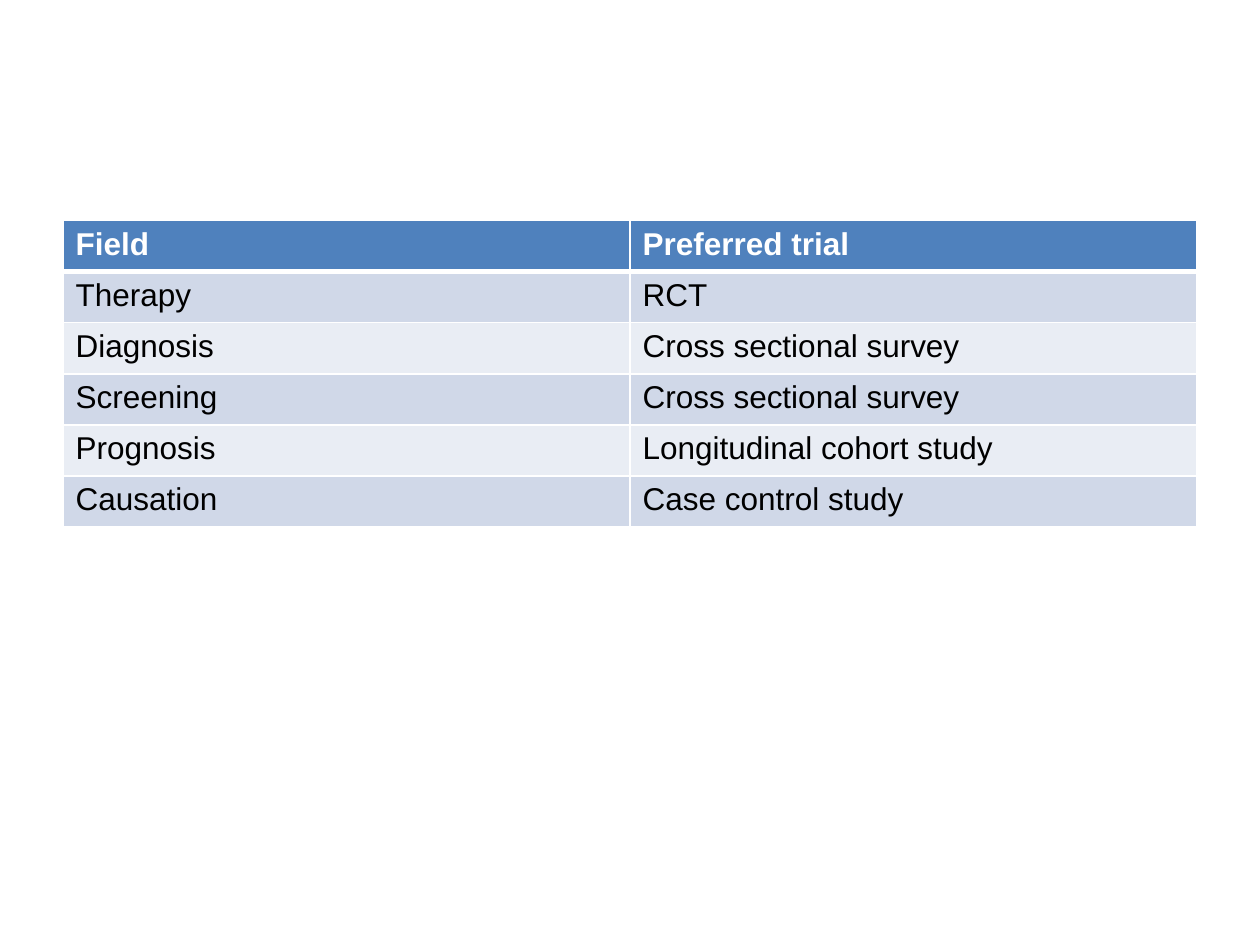
from lxml.etree import SubElement
from pptx import Presentation
from pptx.dml.color import RGBColor
from pptx.oxml.ns import qn
from pptx.util import Pt

WHITE = RGBColor(0xFF, 0xFF, 0xFF)
BLACK = RGBColor(0x00, 0x00, 0x00)
HEADER_BLUE = RGBColor(0x4F, 0x81, 0xBD)
BAND_DARK = RGBColor(0xD0, 0xD8, 0xE8)
BAND_LIGHT = RGBColor(0xE9, 0xED, 0xF4)

TRIALS = [
    ("Field", "Preferred trial"),
    ("Therapy", "RCT"),
    ("Diagnosis", "Cross sectional survey"),
    ("Screening", "Cross sectional survey"),
    ("Prognosis", "Longitudinal cohort study"),
    ("Causation", "Case control study"),
]


def write_text(frame, text, *, size=18, font="Arial", color=BLACK, bold=False):
    """Write one formatted span into the first paragraph of a text frame."""
    span = frame.paragraphs[0].add_run()
    span.text = text
    span.font.size = Pt(size)
    span.font.name = font
    span.font.color.rgb = color
    span.font.bold = bold


def set_borders(cell, *, left=1, right=1, top=1, bottom=1, color=WHITE):
    """Give each side of a cell a solid border of the given width."""
    properties = cell._tc.get_or_add_tcPr()
    sides = {"a:lnL": left, "a:lnR": right, "a:lnT": top, "a:lnB": bottom}
    for tag, width in sides.items():
        line = SubElement(properties, qn(tag), w=str(Pt(width)))
        fill = SubElement(line, qn("a:solidFill"))
        SubElement(fill, qn("a:srgbClr"), val=str(color))


def add_trial_table(page, rows, left, top, width, height):
    """Fill the given box with a banded table under a header row."""
    column_count = len(rows[0])
    table = page.shapes.add_table(
        len(rows), column_count, Pt(left), Pt(top), Pt(width), Pt(height)
    ).table
    for column in table.columns:
        column.width = Pt(width / column_count)
    for row_index, texts in enumerate(rows):
        table.rows[row_index].height = Pt(height / len(rows))
        header = row_index == 0
        band = BAND_DARK if row_index % 2 else BAND_LIGHT
        for column_index, text in enumerate(texts):
            cell = table.cell(row_index, column_index)
            set_borders(
                cell, top=3 if row_index == 1 else 1, bottom=3 if header else 1
            )
            cell.fill.solid()
            cell.fill.fore_color.rgb = HEADER_BLUE if header else band
            write_text(
                cell.text_frame, text, color=WHITE if header else BLACK, bold=header
            )


def main():
    """Build the slide and save the deck."""
    deck = Presentation()
    deck.slide_width, deck.slide_height = Pt(720), Pt(540)
    page = deck.slides.add_slide(deck.slide_layouts.get_by_name("Blank"))
    add_trial_table(page, TRIALS, 36, 126, 648, 175.2)
    deck.save("out.pptx")


if __name__ == "__main__":
    main()
